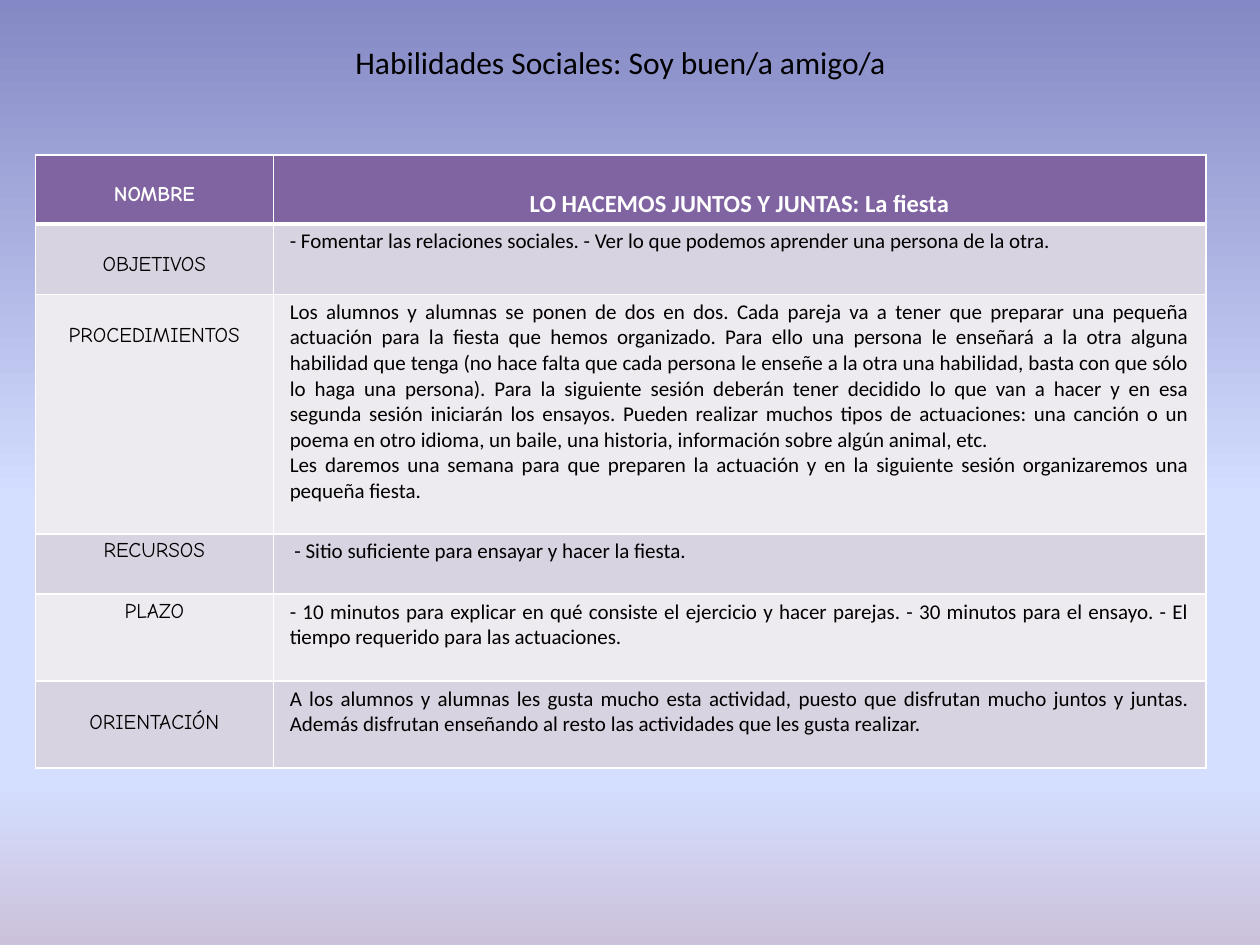
from copy import deepcopy
from dataclasses import dataclass

from lxml import etree
from pptx import Presentation
from pptx.dml.color import RGBColor
from pptx.enum import text
from pptx.oxml import ns
from pptx.util import Inches, Pt


@dataclass(frozen=True)
class Theme:
    black: str = "000000"
    white: str = "FFFFFF"
    header: str = "8064A2"
    bands: tuple = ("EDEAF0", "D8D3E0")
    backdrop: tuple = ((0, "8488C4"), (0.53, "D4DEFF"), (0.83, "D4DEFF"), (1, "CCC1DA"))
    body_font: str = "Calibri"
    label_font: str = "Comic Neue"
    title_size: int = 18
    heading_size: int = 14
    body_size: int = 12
    thin: int = 1
    thick: int = 3


THEME = Theme()
CENTER, JUSTIFY = text.PP_ALIGN.CENTER, text.PP_ALIGN.JUSTIFY
COLUMN_WIDTHS = (1.89, 7.4)
TOP_MARGIN = 0.04

# Row height, label, top margin of the label, paragraphs
ACTIVITY = [
    (0.54, "NOMBRE", 0.22, ["LO HACEMOS JUNTOS Y JUNTAS: La fiesta"]),
    (0.56, "OBJETIVOS", 0.23, [
        "- Fomentar las relaciones sociales. - Ver lo que podemos aprender una persona de la otra."]),
    (1.9, "PROCEDIMIENTOS", 0.23, [
        "Los alumnos y alumnas se ponen de dos en dos. Cada pareja va a tener que preparar una "
        "pequeña actuación para la fiesta que hemos organizado. Para ello una persona le enseñará "
        "a la otra alguna habilidad que tenga (no hace falta que cada persona le enseñe a la otra "
        "una habilidad, basta con que sólo lo haga una persona). Para la siguiente sesión deberán "
        "tener decidido lo que van a hacer y en esa segunda sesión iniciarán los ensayos. Pueden "
        "realizar muchos tipos de actuaciones: una canción o un poema en otro idioma, un baile, "
        "una historia, información sobre algún animal, etc.",
        "Les daremos una semana para que preparen la actuación y en la siguiente sesión "
        "organizaremos una pequeña fiesta."]),
    (0.48, "RECURSOS", TOP_MARGIN, [" - Sitio suficiente para ensayar y hacer la fiesta."]),
    (0.69, "PLAZO", TOP_MARGIN, [
        "- 10 minutos para explicar en qué consiste el ejercicio y hacer parejas. - 30 minutos "
        "para el ensayo. - El tiempo requerido para las actuaciones."]),
    (0.69, "ORIENTACIÓN", 0.23, [
        "A los alumnos y alumnas les gusta mucho esta actividad, puesto que disfrutan mucho juntos "
        "y juntas. Además disfrutan enseñando al resto las actividades que les gusta realizar."]),
]


def style(para, font, size, color, align, bold=False):
    para.alignment = align
    para.font.name = font
    para.font.size = Pt(size)
    para.font.bold = bold
    para.font.color.rgb = RGBColor.from_string(color)


def paint_background(page):
    fill = page.background.fill
    fill.gradient()
    fill.gradient_angle = 270
    stop_list = next(page.element.iter(ns.qn("a:gsLst")))
    while len(stop_list) < len(THEME.backdrop):
        stop_list.append(deepcopy(stop_list[0]))
    for stop, (position, color) in zip(fill.gradient_stops, THEME.backdrop):
        stop.position = position
        stop.color.rgb = RGBColor.from_string(color)


def add_title(page, wording):
    title = page.shapes.title
    title.left, title.top = Inches(2.72), Inches(0.29)
    title.width, title.height = Inches(4.8), Inches(0.4)
    frame = title.text_frame
    frame.text = wording
    frame.auto_size = text.MSO_AUTO_SIZE.NONE
    frame.vertical_anchor = text.MSO_ANCHOR.TOP
    style(frame.paragraphs[0], THEME.body_font, THEME.title_size, THEME.black, text.PP_ALIGN.LEFT)


def set_borders(cell, top, bottom):
    """Draw white cell borders; call before filling the cell."""
    properties = cell._tc.get_or_add_tcPr()
    widths = {"L": THEME.thin, "R": THEME.thin, "T": top, "B": bottom}
    for side, width in widths.items():
        line = etree.SubElement(properties, ns.qn(f"a:ln{side}"), w=str(Pt(width)))
        solid = etree.SubElement(line, ns.qn("a:solidFill"))
        etree.SubElement(solid, ns.qn("a:srgbClr"), val=THEME.white)


def fill_cell(cell, row, paragraphs, top_margin, **look):
    set_borders(cell,
                THEME.thick if row == 1 else THEME.thin,
                THEME.thick if row == 0 else THEME.thin)
    cell.fill.solid()
    cell.fill.fore_color.rgb = RGBColor.from_string(THEME.bands[row % 2] if row else THEME.header)
    cell.margin_left = cell.margin_right = Inches(0.13)
    cell.margin_top, cell.margin_bottom = Inches(top_margin), Inches(TOP_MARGIN)
    cell.text = "\n".join(paragraphs)
    for para in cell.text_frame.paragraphs:
        style(para, color=THEME.black if row else THEME.white, bold=row == 0, **look)


def add_activity_table(page):
    heights = [row[0] for row in ACTIVITY]
    table = page.shapes.add_table(
        len(ACTIVITY), len(COLUMN_WIDTHS), Inches(0.28), Inches(1.23),
        Inches(sum(COLUMN_WIDTHS)), Inches(sum(heights))).table
    for column, width in zip(table.columns, COLUMN_WIDTHS):
        column.width = Inches(width)
    for row, (height, label, label_margin, paragraphs) in enumerate(ACTIVITY):
        table.rows[row].height = Inches(height)
        fill_cell(table.cell(row, 0), row, [label], label_margin,
                  font=THEME.label_font, size=THEME.body_size, align=CENTER)
        fill_cell(table.cell(row, 1), row, paragraphs, TOP_MARGIN if row else 0.27,
                  font=THEME.body_font,
                  size=THEME.body_size if row else THEME.heading_size,
                  align=JUSTIFY if row else CENTER)


def main():
    deck = Presentation()
    deck.slide_width, deck.slide_height = Inches(10), Inches(7.5)
    page = deck.slides.add_slide(deck.slide_layouts.get_by_name("Title Only"))
    paint_background(page)
    add_activity_table(page)
    add_title(page, "Habilidades Sociales: Soy buen/a amigo/a")
    deck.save("out.pptx")


if __name__ == "__main__":
    main()
